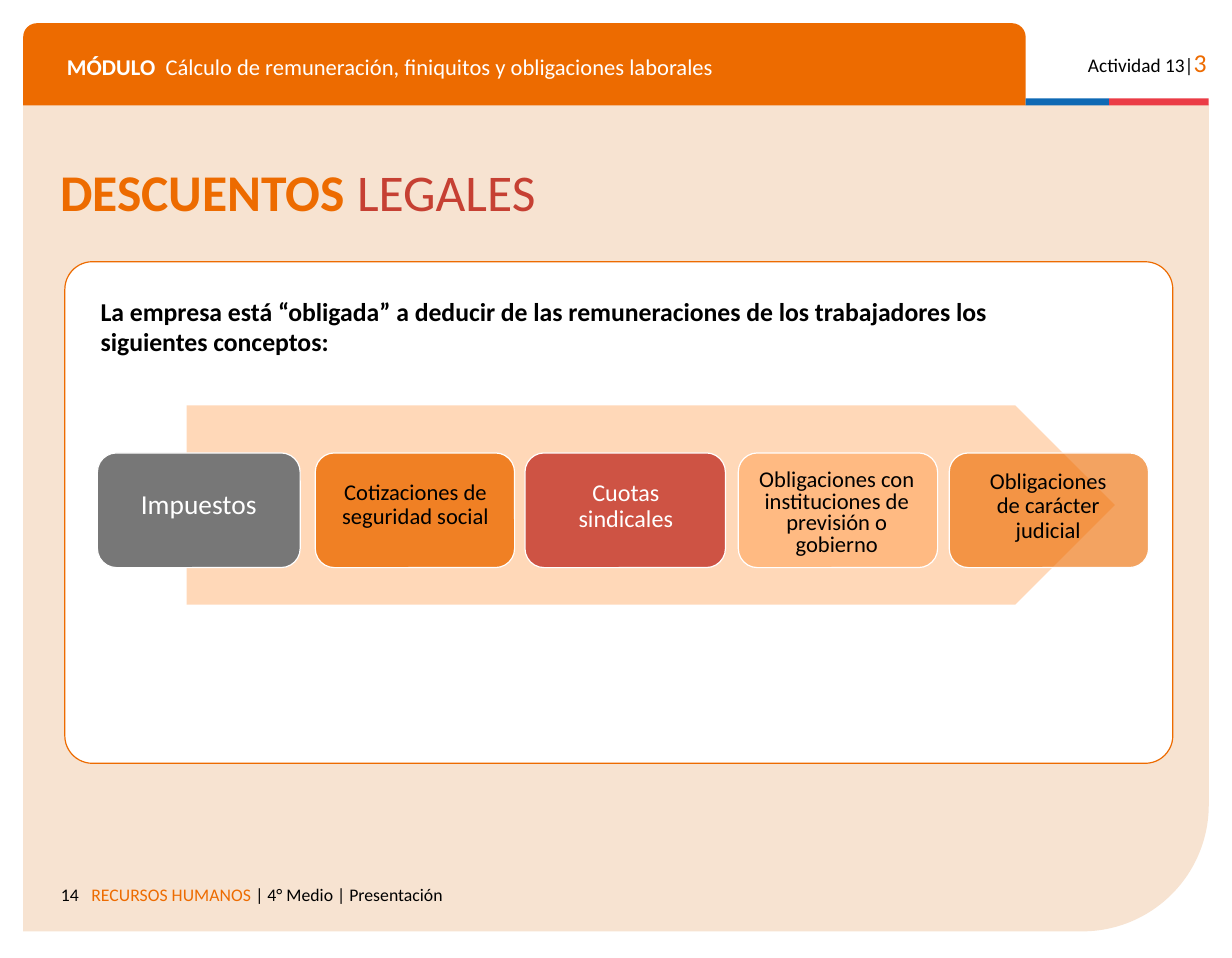
"""Builds the slide on legal payroll deductions."""
import pptx
import pptx.dml.color
import pptx.enum.shapes
import pptx.enum.text
import pptx.oxml
import pptx.oxml.ns
import pptx.util

PX = 9144
FONT = "Calibri"
COLORS = {
    "white": "FFFFFF", "black": "000000", "sand": "F7E3D1", "orange": "ED6B00",
    "blue": "0F69B4", "red": "EB3C46", "brick": "C64033", "rust": "C73E32",
    "peach": "FFB375", "gray": "777777",
}
SHAPE = pptx.enum.shapes.MSO_SHAPE
ALIGN = pptx.enum.text.PP_ALIGN
CARD_TOP, CARD_HEIGHT = 391, 99

CARDS = [
    (84, 175, "gray", 100, "Impuestos", "white", 17, 1.0, (106, 416, 131, 39)),
    (272, 172, "orange", 80, "Cotizaciones de seguridad social", "black", 14, 0.9,
     (271, 410, 175, 53)),
    (453, 173, "rust", 86, "Cuotas sindicales", "white", 15, 0.9, (475, 410, 130, 56)),
    (637, 172, "peach", 80, "Obligaciones con instituciones de previsión o gobierno",
     "black", 14, 0.8, (641, 401, 162, 86)),
    (819, 172, "orange", 62, "Obligaciones de carácter judicial", "black", 14, 0.9,
     (841, 401, 127, 74)),
]


def rgb(name):
    return pptx.dml.color.RGBColor.from_string(COLORS[name])


def place(sp, box):
    sp.left, sp.top, sp.width, sp.height = [v * PX for v in box]


def add_block(shapes, kind, box, fill, line=None, adj=(), alpha=100):
    sp = shapes.add_shape(kind, *[v * PX for v in box])
    sp.shadow.inherit = False
    for i, value in enumerate(adj):
        sp.adjustments[i] = value
    sp.fill.solid()
    sp.fill.fore_color.rgb = rgb(fill)
    if alpha < 100:
        color = sp._element.spPr.find(".//" + pptx.oxml.ns.qn("a:srgbClr"))
        color.append(pptx.oxml.parse_xml(
            f'<a:alpha {pptx.oxml.ns.nsdecls("a")} val="{alpha * 1000}"/>'))
    if line:
        sp.line.color.rgb = rgb(line)
        sp.line.width = pptx.util.Pt(0.75)
    else:
        sp.line.fill.background()
    return sp


def write(sp, runs, size, inset=5, align=ALIGN.LEFT, spacing=1.0, bold=False):
    tf = sp.text_frame
    tf.word_wrap = True
    tf.auto_size = pptx.enum.text.MSO_AUTO_SIZE.NONE
    tf.vertical_anchor = pptx.enum.text.MSO_ANCHOR.TOP
    tf.margin_left = tf.margin_right = 10 * PX
    tf.margin_top = tf.margin_bottom = inset * PX
    p = tf.paragraphs[0]
    p.alignment = align
    p.line_spacing = spacing
    p.font.name = FONT
    p.font.size = pptx.util.Pt(size)
    p.font.bold = bold
    for text, color in runs:
        r = p.add_run()
        r.text = text
        r.font.color.rgb = rgb(color)
    return p


def add_text(shapes, box, runs, size, **style):
    return write(shapes.add_textbox(*[v * PX for v in box]), runs, size, **style)


def add_title(slide):
    sp = slide.shapes.title
    slide.shapes._spTree.append(sp._element)
    place(sp, (42, 133, 1021, 64))
    p = write(sp, [("DESCUENTOS ", "orange"), ("LEGALES", "brick")], 32)
    p.runs[0].font.bold = True


def add_frame(shapes):
    page = add_block(shapes, SHAPE.ROUND_1_RECTANGLE, (20, 90, 1023, 714), "sand",
                     adj=[0.153])
    page.rotation = 180
    page._element.spPr.get_or_add_xfrm().set("flipH", "1")
    add_block(shapes, SHAPE.ROUND_2_SAME_RECTANGLE, (20, 20, 865, 71), "orange",
              adj=[0.167, 0])
    add_block(shapes, SHAPE.RECTANGLE, (885, 85, 72, 6), "blue")
    add_block(shapes, SHAPE.RECTANGLE, (957, 85, 86, 6), "red")
    add_text(shapes, (20, 753, 58, 29), [("14", "black")], 11, inset=10,
             align=ALIGN.RIGHT)
    add_text(shapes, (69, 753, 714, 38),
             [("RECURSOS HUMANOS ", "orange"), ("| 4° Medio | Presentación", "black")],
             11, inset=10)
    p = add_text(shapes, (923, 30, 128, 38), [("Actividad 13|", "black"), ("3", "orange")],
                 12, inset=10, align=ALIGN.RIGHT)
    p.runs[1].font.size = pptx.util.Pt(16)
    add_text(shapes, (48, 38, 110, 35), [("MÓDULO", "white")], 14, inset=10, spacing=0.9,
             bold=True)
    add_text(shapes, (133, 38, 729, 35),
             [("Cálculo de remuneración, finiquitos y obligaciones laborales", "white")],
             14, inset=10, spacing=0.9)


def add_process(shapes):
    group = shapes.add_group_shape().shapes
    add_block(group, SHAPE.PENTAGON, (161, 350, 801, 172), "peach", adj=[0.5], alpha=51)
    for left, width, fill, alpha, text, color, size, spacing, box in CARDS:
        add_block(group, SHAPE.ROUNDED_RECTANGLE, (left, CARD_TOP, width, CARD_HEIGHT),
                  fill, line="white", adj=[0.167], alpha=alpha)
        add_text(group, box, [(text, color)], size, align=ALIGN.CENTER, spacing=spacing)


def main():
    prs = pptx.Presentation()
    prs.slide_width, prs.slide_height = 1063 * PX, 827 * PX
    slide = prs.slides.add_slide(prs.slide_layouts[5])
    shapes = slide.shapes
    add_frame(shapes)
    add_block(shapes, SHAPE.ROUNDED_RECTANGLE, (56, 226, 956, 433), "white",
              line="orange", adj=[0.055])
    add_title(slide)
    add_text(shapes, (77, 250, 863, 89),
             [("La empresa está “obligada” a deducir de las remuneraciones de los "
               "trabajadores los siguientes conceptos:", "black")], 16, bold=True)
    add_process(shapes)
    prs.save("out.pptx")


if __name__ == "__main__":
    main()
